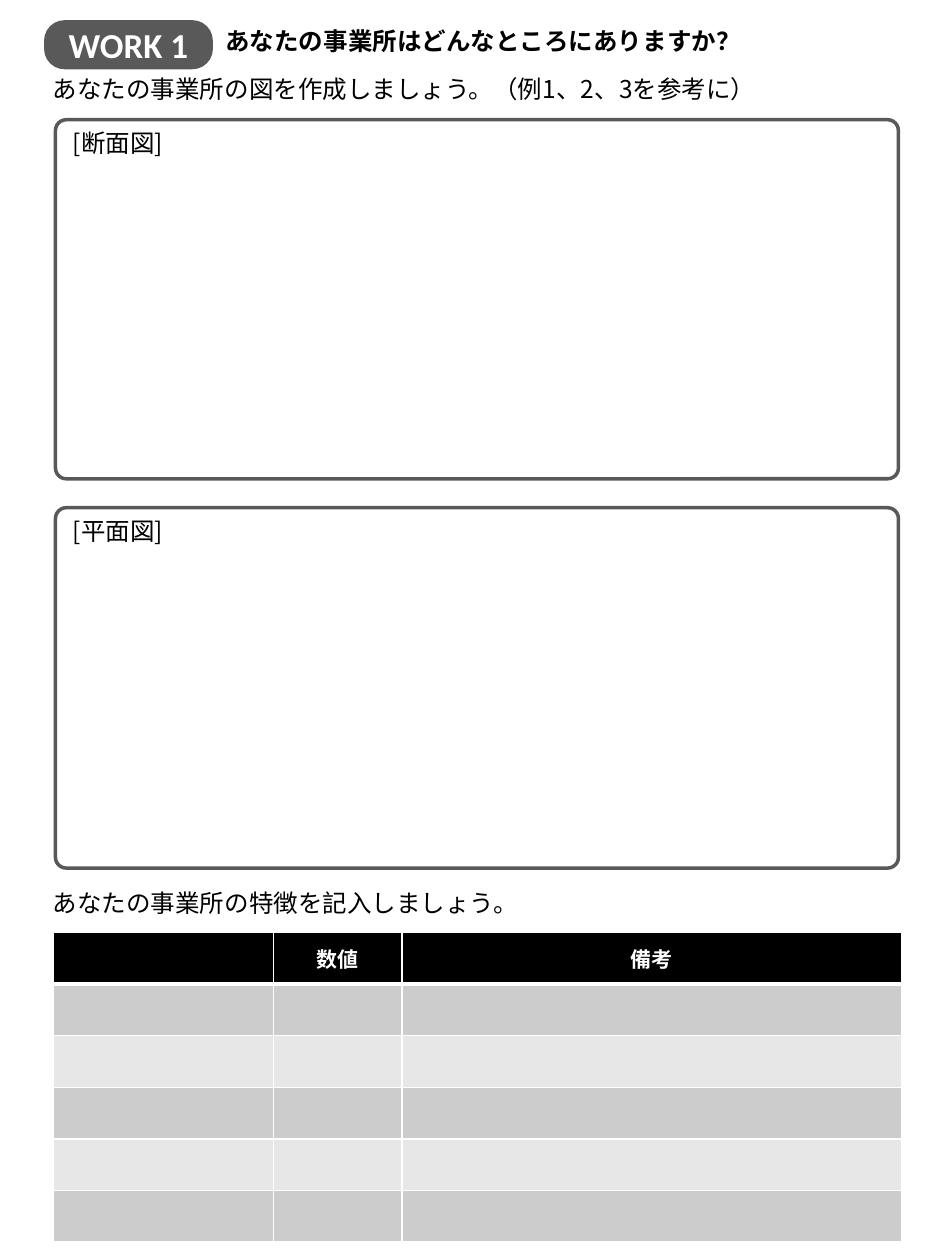
from dataclasses import dataclass

from lxml.etree import SubElement
from pptx import Presentation
from pptx.dml.color import RGBColor
from pptx.enum.shapes import MSO_SHAPE
from pptx.enum.text import MSO_ANCHOR, MSO_AUTO_SIZE, PP_ALIGN
from pptx.oxml.ns import qn
from pptx.shapes.autoshape import Shape
from pptx.slide import Slide
from pptx.table import _Cell
from pptx.text.text import TextFrame
from pptx.util import Inches, Pt


@dataclass(frozen=True)
class Theme:
    black: str = "000000"
    white: str = "FFFFFF"
    gray: str = "595959"
    dark_band: str = "CCCCCC"
    light_band: str = "E7E7E7"
    japanese: str = "Noto Sans CJK JP"
    latin: str = "Calibri"
    badge: int = 20
    body: int = 14
    table: int = 12
    frame_line: int = 2
    grid_line: int = 1
    header_line: int = 3


@dataclass(frozen=True)
class Caption:
    text: str
    left: float
    top: float
    width: float
    bold: bool = False


@dataclass(frozen=True)
class Drawing:
    title: str
    top: float
    height: float


THEME = Theme()
CAPTIONS = [
    Caption("あなたの事業所はどんなところにありますか？", 1.69, 0.16, 6.03, True),
    Caption("あなたの事業所の図を作成しましょう。（例1、2、3を参考に）", 0.32, 0.54, 6.58),
    Caption("あなたの事業所の特徴を記入しましょう。", 0.32, 7, 6.03),
]
DRAWINGS = [Drawing("[断面図]", 0.95, 2.85), Drawing("[平面図]", 4.03, 2.86)]
HEADINGS = ["", "数値", "備考"]
COLUMN_WIDTHS = [1.75, 1.02, 3.97]
ROW_COUNT = 6
ROW_HEIGHT = 0.41


def write(frame: TextFrame, text: str, size: int, color: str, bold: bool,
          font_name: str = THEME.japanese, align: PP_ALIGN = PP_ALIGN.LEFT) -> None:
    frame.text = text
    paragraph = frame.paragraphs[0]
    paragraph.alignment = align
    for run in paragraph.runs:
        run.font.size = Pt(size)
        run.font.bold = bold
        run.font.color.rgb = RGBColor.from_string(color)
        run.font.name = font_name
        SubElement(run.font._element, qn("a:ea"), typeface=font_name)


def add_caption(slide: Slide, caption: Caption) -> None:
    box = slide.shapes.add_textbox(Inches(caption.left), Inches(caption.top),
                                   Inches(caption.width), Inches(0.34))
    box.text_frame.word_wrap = True
    box.text_frame.auto_size = MSO_AUTO_SIZE.SHAPE_TO_FIT_TEXT
    write(box.text_frame, caption.text, THEME.body, THEME.black, caption.bold)


def add_rounded(slide: Slide, left: float, top: float, width: float,
                height: float, rounding: float) -> Shape:
    rounded = slide.shapes.add_shape(MSO_SHAPE.ROUNDED_RECTANGLE, Inches(left), Inches(top),
                                     Inches(width), Inches(height))
    rounded.adjustments[0] = rounding
    rounded.shadow.inherit = False
    return rounded


def add_badge(slide: Slide) -> None:
    badge = add_rounded(slide, 0.35, 0.16, 1.34, 0.39, 0.418)
    badge.fill.solid()
    badge.fill.fore_color.rgb = RGBColor.from_string(THEME.gray)
    badge.line.fill.background()
    badge.text_frame.vertical_anchor = MSO_ANCHOR.MIDDLE
    write(badge.text_frame, "WORK 1", THEME.badge, THEME.white, True,
          THEME.latin, PP_ALIGN.CENTER)


def add_drawing(slide: Slide, drawing: Drawing) -> None:
    border = add_rounded(slide, 0.44, drawing.top, 6.69, drawing.height, 0.03)
    border.fill.background()
    border.line.color.rgb = RGBColor.from_string(THEME.gray)
    border.line.width = Pt(THEME.frame_line)
    add_caption(slide, Caption(drawing.title, 0.48, drawing.top + 0.015, 1.21))


def style_cell(cell: _Cell, row: int) -> None:
    widths = dict.fromkeys(("lnL", "lnR", "lnT", "lnB"), THEME.grid_line)
    if row == 0:
        widths["lnB"] = THEME.header_line
        color = THEME.black
    else:
        color = THEME.dark_band if row % 2 else THEME.light_band
    if row == 1:
        widths["lnT"] = THEME.header_line
    properties = cell._tc.get_or_add_tcPr()
    for edge, width in widths.items():
        line = SubElement(properties, qn(f"a:{edge}"), w=str(Pt(width)))
        SubElement(SubElement(line, qn("a:solidFill")), qn("a:srgbClr"), val=THEME.white)
    cell.fill.solid()
    cell.fill.fore_color.rgb = RGBColor.from_string(color)
    cell.vertical_anchor = MSO_ANCHOR.MIDDLE


def add_features(slide: Slide) -> None:
    features = slide.shapes.add_table(
        ROW_COUNT, len(HEADINGS), Inches(0.42), Inches(7.4),
        Inches(sum(COLUMN_WIDTHS)), Inches(ROW_COUNT * ROW_HEIGHT)).table
    for column, width in zip(features.columns, COLUMN_WIDTHS):
        column.width = Inches(width)
    for index, row in enumerate(features.rows):
        row.height = Inches(ROW_HEIGHT)
        for cell in row.cells:
            style_cell(cell, index)
    for cell, heading in zip(features.rows[0].cells, HEADINGS):
        if heading:
            write(cell.text_frame, heading, THEME.table, THEME.white, True,
                  align=PP_ALIGN.CENTER)


def main() -> None:
    presentation = Presentation()
    presentation.slide_width = Inches(7.5)
    presentation.slide_height = Inches(10)
    slide = presentation.slides.add_slide(presentation.slide_layouts[6])
    add_badge(slide)
    for caption in CAPTIONS:
        add_caption(slide, caption)
    for drawing in DRAWINGS:
        add_drawing(slide, drawing)
    add_features(slide)
    presentation.save("out.pptx")


if __name__ == "__main__":
    main()
